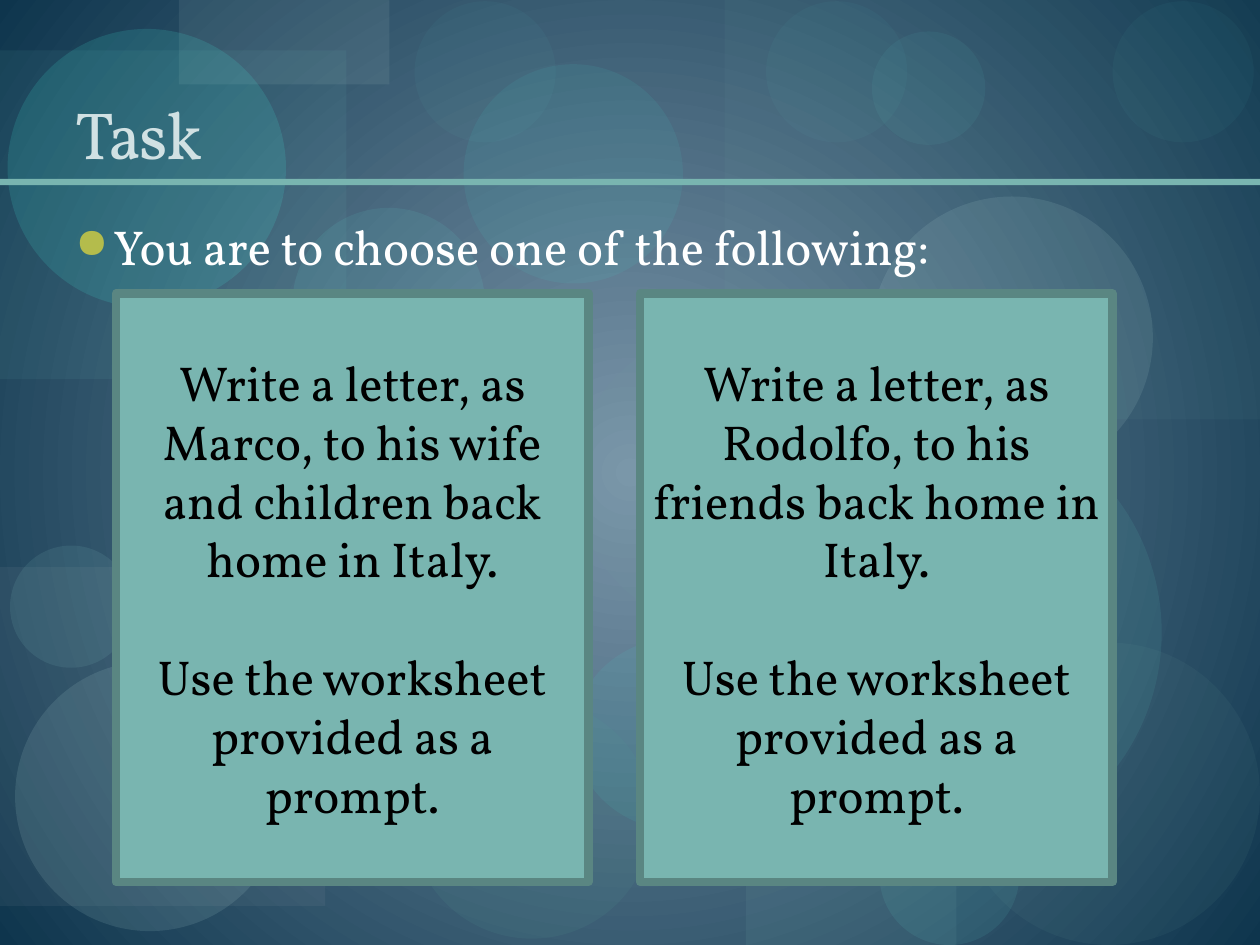
from lxml import etree
from pptx import Presentation
from pptx import util as u
from pptx.dml.color import RGBColor
from pptx.enum import shapes, text
from pptx.oxml import ns

SCALE = 9144  # EMU per px, 100 px to the inch
RECT = shapes.MSO_SHAPE.RECTANGLE
DISC = shapes.MSO_SHAPE.OVAL
TEAL = "79B5B0"


def rgb(code):
    return RGBColor.from_string(code)


def sub(node, tag, **attrs):
    return etree.SubElement(node, ns.qn(tag), attrs)


class Deck:
    font = "Vollkorn"

    def __init__(self, wide, high):
        self.file = Presentation()
        self.file.slide_width = wide * SCALE
        self.file.slide_height = high * SCALE
        self.slide = self.file.slides.add_slide(self.file.slide_layouts[6])

    def glow(self, inner, outer):
        """Fill the background with a gradient from the centre outwards."""
        fill = self.slide.background.fill
        fill.gradient()
        for stop, code, place in zip(fill.gradient_stops, (inner, outer), (0, 1)):
            stop.color.rgb = rgb(code)
            stop.position = place
        grad = self.slide.element.find(".//" + ns.qn("a:gradFill"))
        grad.remove(grad.find(ns.qn("a:lin")))
        ring = sub(grad, "a:path", path="circle")
        sub(ring, "a:fillToRect", **dict.fromkeys("ltrb", "50000"))

    def shape(self, kind, box, color, alpha=100):
        item = self.slide.shapes.add_shape(kind, *(n * SCALE for n in box))
        item.shadow.inherit = False
        item.fill.solid()
        item.fill.fore_color.rgb = rgb(color)
        item.line.fill.background()
        if alpha < 100:
            tint = item._element.spPr.find(".//" + ns.qn("a:srgbClr"))
            sub(tint, "a:alpha", val=str(alpha * 1000))
        return item

    def words(self, frame, lines, size, color, anchor, align=None, gap=0):
        frame.word_wrap = True
        frame.vertical_anchor = anchor
        for i, line in enumerate(lines):
            para = frame.add_paragraph() if i else frame.paragraphs[0]
            para.text = line
            para.alignment = align
            para.space_before = u.Pt(gap if i else 0)
            para.font.size = u.Pt(size)
            para.font.name = self.font
            para.font.color.rgb = rgb(color)
        return frame.paragraphs[0]

    def label(self, box, line, size, color, anchor):
        item = self.slide.shapes.add_textbox(*(n * SCALE for n in box))
        return self.words(item.text_frame, [line], size, color, anchor)

    def bullet(self, para, char, color, size, indent):
        props = para._p.get_or_add_pPr()
        props.set("marL", str(indent * SCALE))
        props.set("indent", str(-indent * SCALE))
        tint = sub(props, "a:buClr")
        sub(tint, "a:srgbClr", val=color)
        marks = [tint, sub(props, "a:buSzPct", val=str(size * 1000)),
                 sub(props, "a:buChar", char=char)]
        base = props.find(ns.qn("a:defRPr"))
        for mark in marks:
            base.addprevious(mark)

    def card(self, box, lines):
        item = self.shape(RECT, box, TEAL)
        item.line.color.rgb = rgb("5A8682")
        item.line.width = u.Pt(4.72)
        self.words(item.text_frame, lines, 28, "000000",
                   text.MSO_ANCHOR.MIDDLE, text.PP_ALIGN.CENTER, gap=33.6)


def main():
    deck = Deck(1000, 750)

    # Background: glow, then faint discs and panels from back to front
    deck.glow("7B96AA", "0E354D")
    for kind, box, color, alpha in [
        (DISC, (326, 555, 192, 190), "549791", 13),
        (RECT, (575, 0, 425, 333), TEAL, 6),
        (RECT, (0, 450, 258, 269), "B2B7BA", 8),
        (DISC, (457, 261, 238, 238), "70A39E", 8),
        (DISC, (698, 639, 111, 111), "65E8DC", 9),
        (DISC, (691, 156, 224, 224), "C1E8E4", 11),
        (DISC, (12, 525, 214, 214), "C1E8E4", 12),
        (DISC, (456, 506, 166, 153), "44EADC", 8),
        (RECT, (0, 40, 275, 261), "77D6CE", 7),
        (RECT, (142, 0, 167, 67), "BED7D4", 10),
        (DISC, (6, 23, 221, 221), "44EADC", 15),
        (DISC, (8, 433, 97, 97), "97DCD6", 10),
        (DISC, (232, 165, 153, 153), "65E8DC", 9),
        (DISC, (368, 51, 174, 174), "44EADC", 8),
        (DISC, (568, 325, 354, 354), "61CDC4", 10),
        (DISC, (608, 1, 112, 112), "65E8DC", 4),
        (DISC, (760, 510, 240, 240), "70A39E", 8),
        (DISC, (692, 25, 90, 90), "65E8DC", 6),
        (DISC, (883, 1, 112, 112), "65E8DC", 4),
        (RECT, (592, 692, 167, 58), TEAL, 10),
        (DISC, (329, 1, 112, 112), "65E8DC", 4),
    ]:
        deck.shape(kind, box, color, alpha)

    # Title over its rule
    deck.shape(RECT, (0, 142, 1000, 5), TEAL)
    title = deck.label((50, 17, 900, 125), "Task", 38, "D1E1E3",
                       text.MSO_ANCHOR.BOTTOM)
    title._p.pPr.find(ns.qn("a:defRPr")).set("spc", "-100")

    # Lead line
    lead = deck.label((50, 167, 900, 500),
                      "You are to choose one of the following:",
                      28, "FFFFFF", text.MSO_ANCHOR.TOP)
    lead.space_before = u.Pt(7)
    deck.bullet(lead, "●", "B4BC4C", 85, 30)

    # Two task cards
    tasks = ["Marco, to his wife and children", "Rodolfo, to his friends"]
    for i, who in enumerate(tasks):
        deck.card((92 + 416 * i, 233, 375, 467),
                  [f"Write a letter, as {who} back home in Italy.",
                   "Use the worksheet provided as a prompt."])

    deck.file.save("out.pptx")


if __name__ == "__main__":
    main()
